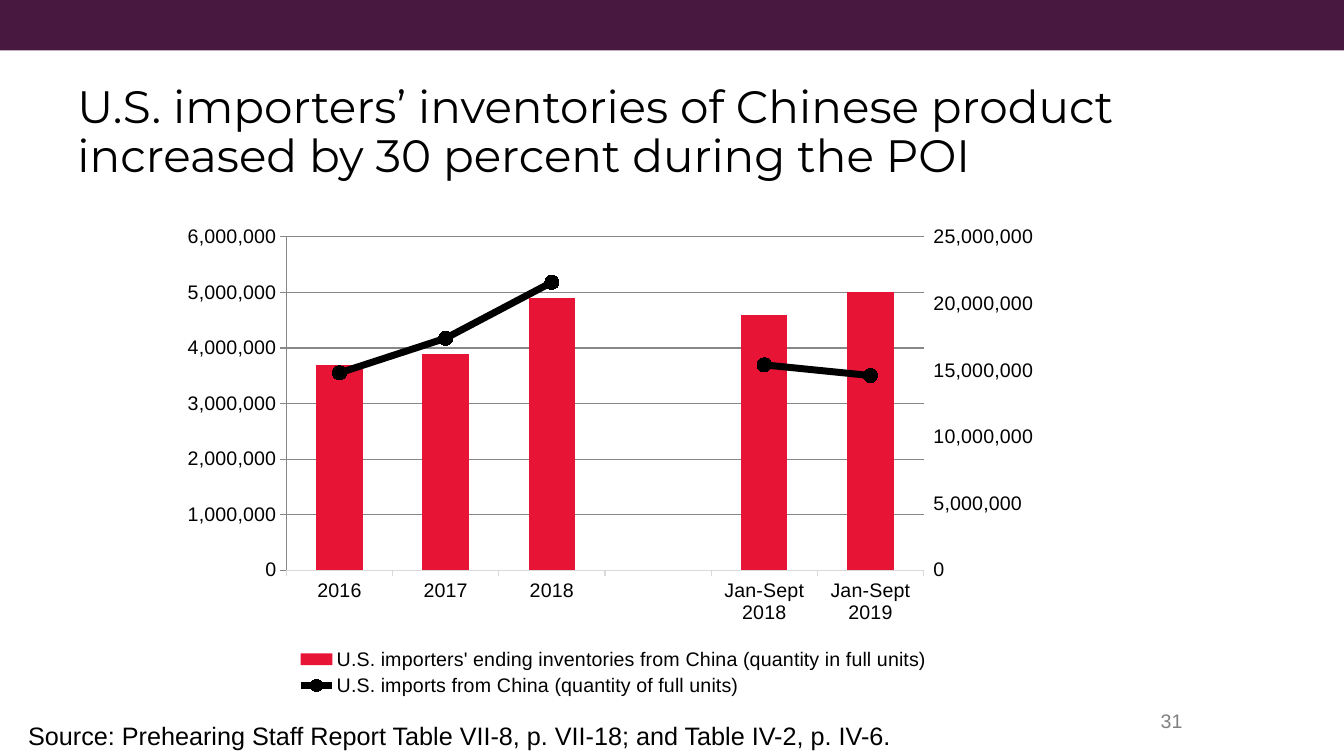
from dataclasses import dataclass

from lxml.etree import SubElement
from pptx import Presentation
from pptx.chart.axis import ValueAxis
from pptx.chart.chart import Chart
from pptx.chart.data import CategoryChartData
from pptx.dml.color import RGBColor
from pptx.enum.chart import XL_CHART_TYPE as ChartType
from pptx.enum.chart import XL_LEGEND_POSITION as LegendPosition
from pptx.enum.chart import XL_MARKER_STYLE as MarkerStyle
from pptx.enum.chart import XL_TICK_MARK as TickMark
from pptx.enum.shapes import MSO_SHAPE as Preset
from pptx.enum.text import MSO_ANCHOR as Anchor
from pptx.enum.text import PP_ALIGN as Align
from pptx.oxml import parse_xml
from pptx.oxml.ns import nsdecls, qn
from pptx.slide import Slide
from pptx.util import Pt


@dataclass(frozen=True)
class Theme:
    plum: RGBColor = RGBColor(0x49, 0x18, 0x40)
    red: RGBColor = RGBColor(0xE7, 0x14, 0x35)
    black: RGBColor = RGBColor(0, 0, 0)
    grey: RGBColor = RGBColor(0x80, 0x80, 0x80)
    rule: RGBColor = RGBColor(0xD9, 0xD9, 0xD9)
    heading_font: str = "Montserrat"
    body_font: str = "Arial"
    title_size: float = 32.4
    source_size: float = 18
    small_size: float = 14


@dataclass(frozen=True)
class Box:
    left: float
    top: float
    width: float
    height: float

    def points(self) -> tuple[Pt, Pt, Pt, Pt]:
        return Pt(self.left), Pt(self.top), Pt(self.width), Pt(self.height)


@dataclass(frozen=True)
class Measure:
    name: str
    quantities: tuple[int | None, ...]


THEME = Theme()
PERIODS = ("2016", "2017", "2018", "", "Jan-Sept 2018", "Jan-Sept 2019")
INVENTORIES = Measure(
    "U.S. importers' ending inventories from China (quantity in full units)",
    (3_700_000, 3_900_000, 4_900_000, None, 4_600_000, 5_000_000),
)
IMPORTS = Measure(
    "U.S. imports from China (quantity of full units)",
    (14_800_000, 17_400_000, 21_600_000, None, 15_400_000, 14_600_000),
)
PLOT_AREA = {"x": 0.13, "y": 0.04, "w": 0.72, "h": 0.69}


def add_text(slide: Slide, text: str, box: Box, *, size: float,
             font: str = THEME.body_font, color: RGBColor = THEME.black,
             align: Align = Align.LEFT, anchor: Anchor = Anchor.TOP,
             line_spacing: float = 1.0) -> None:
    frame = slide.shapes.add_textbox(*box.points()).text_frame
    frame.word_wrap = True
    frame.vertical_anchor = anchor
    paragraph = frame.paragraphs[0]
    paragraph.text = text
    paragraph.alignment = align
    paragraph.line_spacing = line_spacing
    paragraph.font.size = Pt(size)
    paragraph.font.name = font
    paragraph.font.color.rgb = color


def add_banner(slide: Slide, box: Box) -> None:
    banner = slide.shapes.add_shape(Preset.RECTANGLE, *box.points())
    banner.shadow.inherit = False
    banner.fill.solid()
    banner.fill.fore_color.rgb = THEME.plum
    banner.line.fill.background()


def move_last_series_to_right_axis(chart: Chart) -> ValueAxis:
    """Turn the last bar series into a line on a second pair of axes."""
    plot_area = chart.element.find(".//" + qn("c:plotArea"))
    bars = plot_area.find(qn("c:barChart"))
    imports = bars.findall(qn("c:ser"))[-1]
    for bar_only in imports.findall(qn("c:invertIfNegative")):
        imports.remove(bar_only)
    line_chart = parse_xml(
        f'<c:lineChart {nsdecls("c")}><c:grouping val="standard"/>'
        '<c:varyColors val="0"/><c:marker val="1"/>'
        '<c:axId val="5001"/><c:axId val="5002"/></c:lineChart>')
    line_chart.insert(2, imports)
    bars.addnext(line_chart)

    right_axis = parse_xml(
        f'<c:valAx {nsdecls("c")}><c:axId val="5002"/>'
        '<c:scaling><c:orientation val="minMax"/></c:scaling>'
        '<c:delete val="0"/><c:axPos val="r"/>'
        '<c:numFmt formatCode="#,##0" sourceLinked="0"/>'
        '<c:majorTickMark val="out"/><c:minorTickMark val="none"/>'
        '<c:tickLblPos val="nextTo"/><c:crossAx val="5001"/>'
        '<c:crosses val="max"/></c:valAx>')
    hidden_axis = parse_xml(
        f'<c:catAx {nsdecls("c")}><c:axId val="5001"/>'
        '<c:scaling><c:orientation val="minMax"/></c:scaling>'
        '<c:delete val="1"/><c:axPos val="b"/>'
        '<c:crossAx val="5002"/><c:crosses val="autoZero"/></c:catAx>')
    plot_area.findall(qn("c:valAx"))[-1].addnext(right_axis)
    right_axis.addnext(hidden_axis)
    return ValueAxis(right_axis)


def place_plot_area(chart: Chart) -> None:
    plot_area = chart.element.find(".//" + qn("c:plotArea"))
    layout = plot_area.find(qn("c:layout"))
    if layout is None:
        layout = parse_xml(f'<c:layout {nsdecls("c")}/>')
        plot_area.insert(0, layout)
    manual = SubElement(layout, qn("c:manualLayout"))
    settings = {"layoutTarget": "inner", "xMode": "edge", "yMode": "edge"}
    for tag, value in (settings | PLOT_AREA).items():
        SubElement(manual, qn(f"c:{tag}")).set("val", str(value))


def style_value_axis(axis: ValueAxis, top: int, step: int) -> None:
    axis.minimum_scale, axis.maximum_scale, axis.major_unit = 0, top, step
    axis.has_major_gridlines = False
    axis.major_tick_mark = TickMark.OUTSIDE
    axis.format.line.fill.background()
    axis.tick_labels.number_format = "#,##0"
    axis.tick_labels.number_format_is_linked = False
    axis.tick_labels.font.size = Pt(THEME.small_size)
    axis.tick_labels.font.name = THEME.body_font
    axis.tick_labels.font.color.rgb = THEME.black


def add_inventory_chart(slide: Slide, box: Box) -> None:
    data = CategoryChartData(number_format="#,##0")
    data.categories = PERIODS
    for measure in (INVENTORIES, IMPORTS):
        data.add_series(measure.name, measure.quantities)
    chart = slide.shapes.add_chart(
        ChartType.COLUMN_CLUSTERED, *box.points(), data).chart
    chart.has_title = False
    chart.font.size = Pt(THEME.small_size)
    chart.font.name = THEME.body_font
    chart.font.color.rgb = THEME.black
    chart.has_legend = True
    chart.legend.position = LegendPosition.BOTTOM
    chart.legend.include_in_layout = False

    right_axis = move_last_series_to_right_axis(chart)
    place_plot_area(chart)
    style_value_axis(chart.value_axis, 6_000_000, 1_000_000)
    style_value_axis(right_axis, 25_000_000, 5_000_000)
    chart.category_axis.major_tick_mark = TickMark.OUTSIDE
    chart.category_axis.format.line.color.rgb = THEME.rule

    columns, lines = chart.plots
    columns.gap_width = 129
    columns.vary_by_categories = False
    inventories = columns.series[0].format.fill
    inventories.solid()
    inventories.fore_color.rgb = THEME.red

    imports = lines.series[0]
    imports.smooth = False
    imports.format.line.width = Pt(5)
    imports.format.line.color.rgb = THEME.black
    imports.marker.style = MarkerStyle.CIRCLE
    imports.marker.size = 10
    imports.marker.format.fill.solid()
    imports.marker.format.fill.fore_color.rgb = THEME.black
    imports.marker.format.line.color.rgb = THEME.black


def main() -> None:
    deck = Presentation()
    deck.slide_width, deck.slide_height = Pt(960), Pt(540)
    slide = deck.slides.add_slide(deck.slide_layouts[6])
    add_banner(slide, Box(0, 0, 960, 36))
    add_text(slide, "31", Box(754.5, 500.4, 97.2, 28.8), size=THEME.small_size,
             color=THEME.grey, align=Align.RIGHT, anchor=Anchor.MIDDLE)
    add_text(slide, "U.S. importers’ inventories of Chinese product "
             "increased by 30 percent during the POI",
             Box(48.2, 46.8, 861, 97.2), size=THEME.title_size,
             font=THEME.heading_font, anchor=Anchor.MIDDLE, line_spacing=0.9)
    add_inventory_chart(slide, Box(122.4, 155.5, 632.2, 344.9))
    add_text(slide, "Source: Prehearing Staff Report Table VII-8, p. VII-18; "
             "and Table IV-2, p. IV-6.",
             Box(13, 511.2, 665.3, 28.8), size=THEME.source_size)
    deck.save("out.pptx")


if __name__ == "__main__":
    main()
